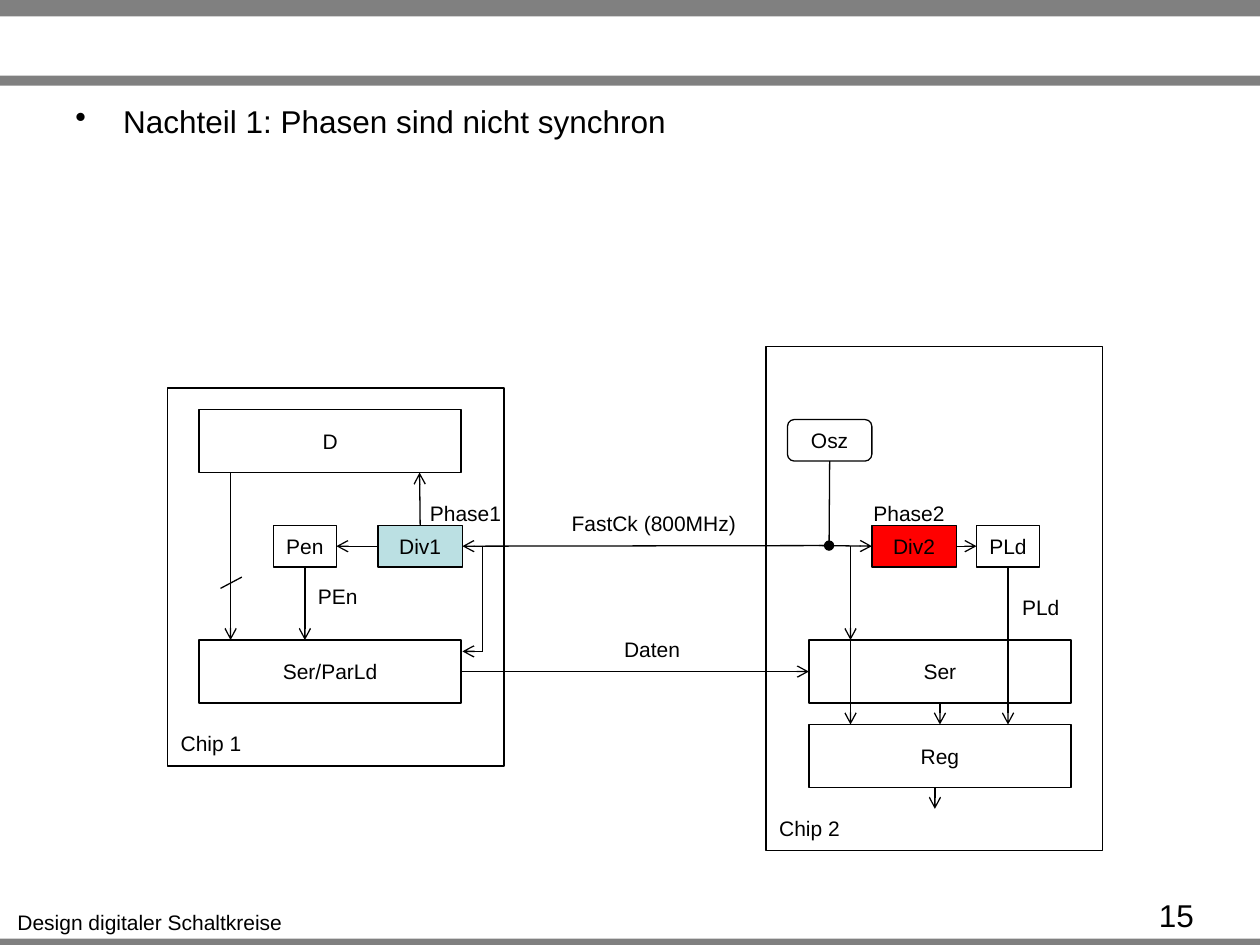
from lxml.etree import SubElement as Sub
from pptx import Presentation as Deck
from pptx.dml.color import RGBColor as Rgb
from pptx.enum.shapes import MSO_CONNECTOR as Conn, MSO_SHAPE as Kind
from pptx.enum.text import MSO_ANCHOR as Anchor, MSO_AUTO_SIZE as Fit, PP_ALIGN as Align
from pptx.oxml.ns import qn
from pptx.util import Inches, Pt

INK = {"black": "000000", "gray": "808080", "teal": "BBE0E3", "red": "FF0000"}
FRAME = {"word_wrap": True, "vertical_anchor": Anchor.MIDDLE}
LABEL = {"word_wrap": False, "auto_size": Fit.SHAPE_TO_FIT_TEXT}
BODY = {"word_wrap": True, "vertical_anchor": Anchor.TOP}


def apply(item, style):
    for name, value in style.items():
        setattr(item, name, value)


def color(name):
    return Rgb.from_string(INK[name])


class Sheet:
    font = {"name": "Arial", "size": Pt(12)}
    width = Pt(0.75)

    def __init__(self, slide):
        self.slide = slide
        self.shapes = slide.shapes

    def letter(self, shape, text, frame, align=Align.CENTER, size=12, bullet=False):
        apply(shape.text_frame, frame)
        para = shape.text_frame.paragraphs[0]
        para.text = text
        para.alignment = align
        if bullet:
            props = para._p.get_or_add_pPr()
            props.set("marL", str(Inches(0.38)))
            props.set("indent", str(-Inches(0.38)))
            Sub(props, qn("a:buChar")).set("char", "•")
        apply(para.font, {**self.font, "size": Pt(size)})
        para.font.color.rgb = color("black")

    def box(self, at, text="", fill=None, kind=Kind.RECTANGLE, line="black"):
        shape = self.shapes.add_shape(kind, *map(Inches, at))
        shape.shadow.inherit = False
        if fill:
            shape.fill.solid()
            shape.fill.fore_color.rgb = color(fill)
        else:
            shape.fill.background()
        if line:
            shape.line.color.rgb = color(line)
            shape.line.width = self.width
        else:
            shape.line.fill.background()
        if text:
            self.letter(shape, text, FRAME)
        return shape

    def text(self, at, text, frame=LABEL, **style):
        self.letter(self.shapes.add_textbox(*map(Inches, at)), text, frame, **style)

    def wire(self, start, end, tail="arrow", head=None, begin=None, stop=None):
        wire = self.shapes.add_connector(Conn.STRAIGHT, *map(Inches, start + end))
        wire.line.color.rgb = color("black")
        wire.line.width = self.width
        line = wire.line._get_or_add_ln()
        for tag, tip in (("a:headEnd", head), ("a:tailEnd", tail)):
            if tip:
                Sub(line, qn(tag)).set("type", tip)
        Sub(wire._element.spPr, qn("a:effectLst"))
        if begin:
            wire.begin_connect(*begin)
        if stop:
            wire.end_connect(*stop)


def main():
    deck = Deck()
    deck.slide_width, deck.slide_height = Inches(10), Inches(7.5)
    sheet = Sheet(deck.slides.add_slide(deck.slide_layouts[6]))

    for top, high in ((7.45, 0.08), (0, 0.13), (0.6, 0.08)):
        sheet.box((0, top, 10, high), fill="gray", line=None)
    sheet.text((0.5, 0.76, 9, 0.99), "Nachteil 1: Phasen sind nicht synchron",
               BODY, align=Align.LEFT, size=18, bullet=True)
    sheet.text((9.1, 7.06, 0.87, 0.24), "15", BODY, align=Align.LEFT, size=18)

    sheet.box((1.33, 3.08, 2.67, 3))
    sheet.box((6.08, 2.75, 2.67, 4))

    wide, mid, small = (2.08, 0.5), (0.67, 0.33), (0.5, 0.33)
    sheet.box((1.58, 3.25, *wide), "D")
    load = sheet.box((1.58, 5.08, *wide), "Ser/ParLd")
    ser = sheet.box((6.42, 5.08, *wide), "Ser")
    reg = sheet.box((6.42, 5.75, *wide), "Reg")
    div1 = sheet.box((3, 4.17, *mid), "Div1", "teal")
    div2 = sheet.box((6.92, 4.17, *mid), "Div2", "red")
    pen = sheet.box((2.17, 4.17, *small), "Pen")
    pld = sheet.box((7.75, 4.17, *small), "PLd")
    osz = sheet.box((6.25, 3.33, *mid), "Osz", kind=Kind.ROUNDED_RECTANGLE)

    sheet.wire((3.67, 5.33), (6.42, 5.33), begin=(load, 3), stop=(ser, 1))
    sheet.wire((6.58, 4.33), (3.67, 4.33), head="oval", stop=(div1, 3))
    sheet.wire((2.42, 4.5), (2.42, 5.08), begin=(pen, 2))
    sheet.wire((3.33, 4.17), (3.33, 3.75), begin=(div1, 0))
    sheet.wire((3, 4.33), (2.67, 4.33), begin=(div1, 1), stop=(pen, 3))
    sheet.wire((1.83, 3.75), (1.83, 5.08))
    sheet.wire((1.92, 4.58), (1.75, 4.67), tail=None)
    sheet.wire((3.83, 4.33), (3.83, 5.17), tail=None)
    sheet.wire((3.83, 5.17), (3.67, 5.17))
    sheet.wire((6.58, 3.67), (6.58, 4.33), tail=None, begin=(osz, 2))
    sheet.wire((6.5, 4.33), (6.92, 4.33), stop=(div2, 1))
    sheet.wire((7.58, 4.33), (7.75, 4.33), begin=(div2, 3), stop=(pld, 1))
    sheet.wire((8, 4.5), (8, 5.75), begin=(pld, 2))
    sheet.wire((6.75, 4.33), (6.75, 5.08))
    sheet.wire((6.75, 5.08), (6.75, 5.75))
    sheet.wire((7.46, 5.58), (7.46, 5.75), begin=(ser, 2), stop=(reg, 0))
    sheet.wire((7.42, 6.25), (7.42, 6.42))

    for left, top, width, text in (
        (0.03, 7.17, 2.32, "Design digitaler Schaltkreise"),
        (1.33, 5.75, 0.69, "Chip 1"),
        (6.08, 6.42, 0.69, "Chip 2"),
        (4.41, 4, 1.56, "FastCk (800MHz)"),
        (4.85, 5, 0.65, "Daten"),
        (2.42, 4.58, 0.52, "PEn"),
        (8.01, 4.67, 0.5, "PLd"),
        (3.31, 3.92, 0.77, "Phase1"),
        (6.83, 3.92, 0.77, "Phase2"),
    ):
        sheet.text((left, top, width, 0.3), text)

    deck.save("out.pptx")


if __name__ == "__main__":
    main()
